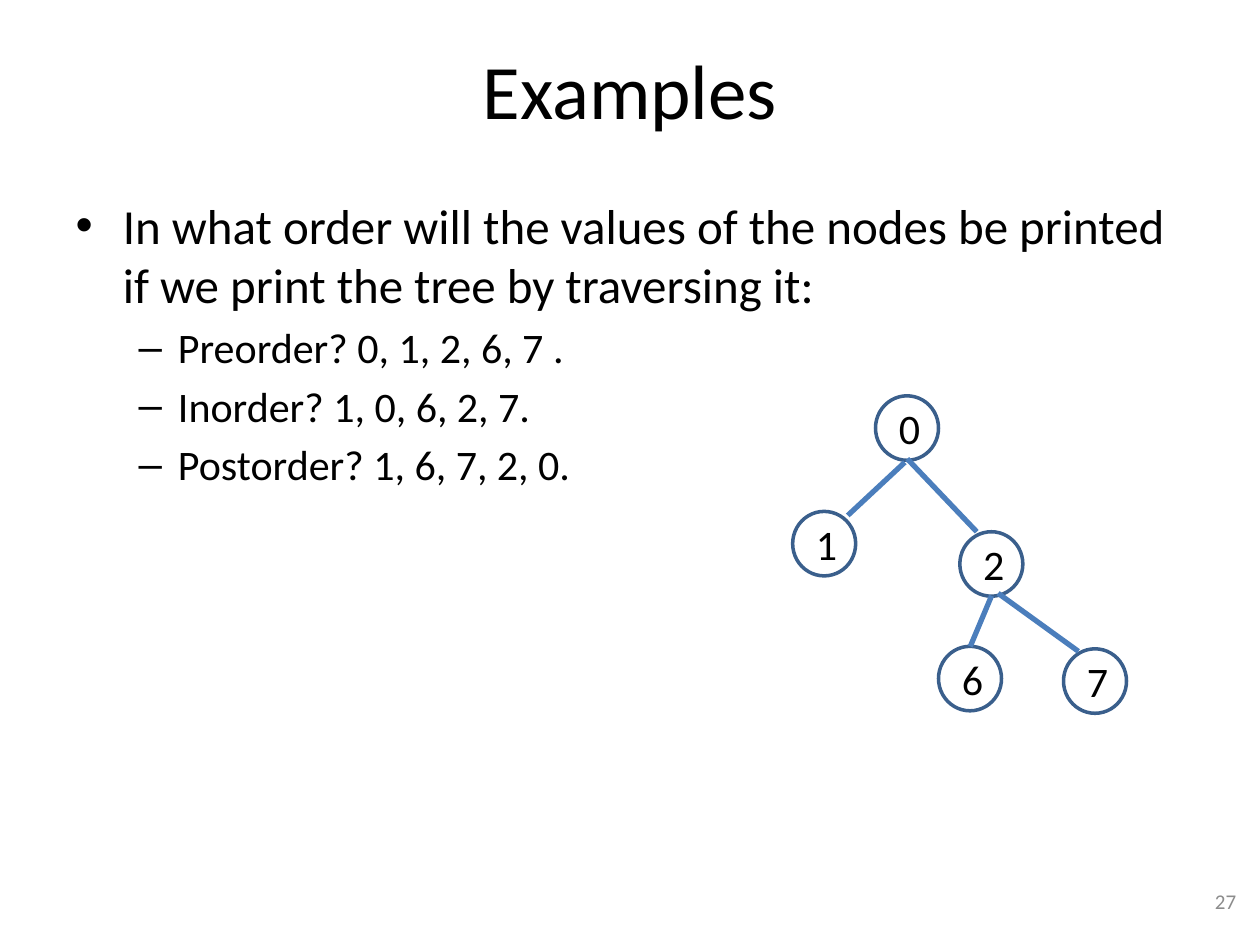
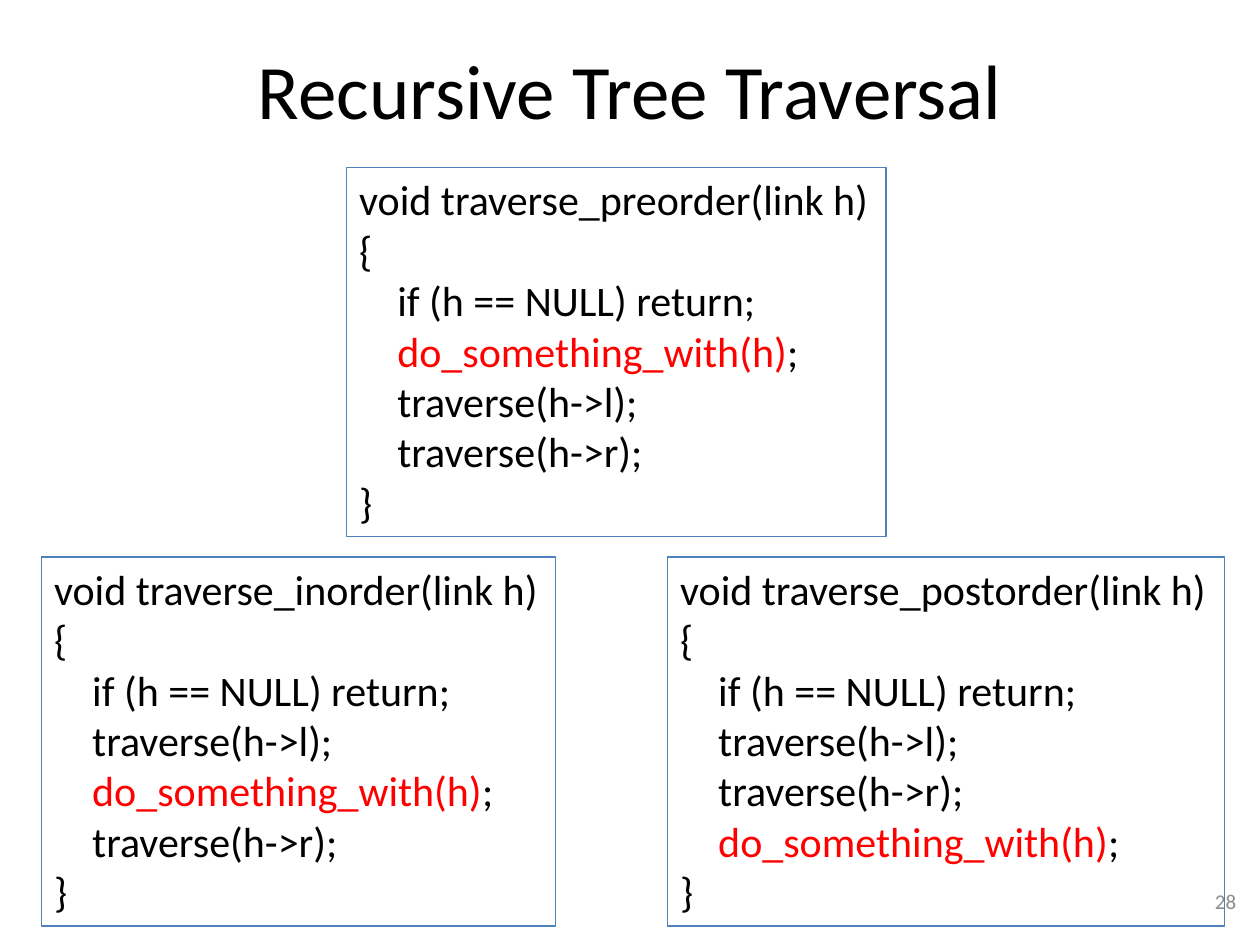
"""Build two slides on the order of tree traversal."""
from lxml.etree import SubElement as Sub
from pptx import Presentation as Deck
from pptx.dml.color import RGBColor as Rgb
from pptx.enum.shapes import MSO_CONNECTOR as Link, MSO_SHAPE as Form
from pptx.enum.text import MSO_ANCHOR as Anchor, MSO_AUTO_SIZE as Fit, PP_ALIGN as Align
from pptx.oxml.ns import qn
from pptx.util import Cm, Pt

INK = {"text": "000000", "page": "8C8C8C", "ring": "3A5F8C",
       "edge": "4B7EBC", "frame": "4F81BD", "visit": "FF0000"}
FONT = "Calibri"

ITEMS = [
    (0, "In what order will the values of the nodes be printed "
        "if we print the tree by traversing it:"),
    (1, "Preorder? 0, 1, 2, 6, 7 ."),
    (1, "Inorder? 1, 0, 6, 2, 7."),
    (1, "Postorder? 1, 6, 7, 2, 0."),
]
SIZES = [28, 24]
NODES = {"0": (17.65, 7.98), "1": (15.98, 10.31), "7": (21.44, 13.08),
         "2": (19.35, 10.72), "6": (18.92, 13.03)}
NODE = (1.27, 1.3)
EDGES = [
    (18.24, 9.32, 17.09, 10.39),
    (18.29, 9.25, 19.69, 10.72),
    (20.12, 11.96, 21.74, 13.13),
    (19.99, 12.01, 19.56, 13.03),
]

VISIT = "do_something_with(h)"
STEPS = ["traverse(h->l)", "traverse(h->r)"]
CODES = [
    ("inorder", 1, 0.84, 11.23, 10.36),
    ("preorder", 0, 6.99, 3.38, 10.87),
    ("postorder", 2, 13.46, 11.23, 11.23),
]
TALL = 7.44
TAB = 0.77


def tint(name):
    return Rgb.from_string(INK[name])


def place(part, *box):
    part.left, part.top, part.width, part.height = map(Cm, box)


def write(para, text, size, ink="text"):
    run = para.add_run()
    run.text = text
    run.font.name, run.font.size = FONT, Pt(size)
    run.font.color.rgb = tint(ink)


def lines(frame):
    yield frame.paragraphs[0]
    while True:
        yield frame.add_paragraph()


def start(deck, layout, title, page):
    slide = deck.slides.add_slide(deck.slide_layouts[layout])
    head = slide.shapes.title
    place(head, 1.27, 0.2, 22.86, 3.18)
    head.text_frame.vertical_anchor = Anchor.MIDDLE
    write(head.text_frame.paragraphs[0], title, 44)
    foot = slide.shapes.add_textbox(*map(Cm, (19.25, 17.65, 5.92, 1.02)))
    foot.text_frame.word_wrap = True
    foot.text_frame.vertical_anchor = Anchor.MIDDLE
    para = foot.text_frame.paragraphs[0]
    para.alignment = Align.RIGHT
    write(para, str(page), 12, "page")
    return slide


def add_list(slide):
    body = slide.placeholders[1]
    place(body, 1.27, 3.81, 22.86, 13.97)
    body.text_frame.auto_size = Fit.NONE
    for para, (level, text) in zip(lines(body.text_frame), ITEMS):
        para.level = level
        write(para, text, SIZES[level])


def add_node(slide, name, spot):
    ring = slide.shapes.add_shape(Form.OVAL, *map(Cm, spot + NODE))
    ring.shadow.inherit = False
    ring.fill.background()
    ring.line.color.rgb, ring.line.width = tint("ring"), Pt(2)
    frame = ring.text_frame
    frame.word_wrap = False
    frame.vertical_anchor = Anchor.MIDDLE
    frame.margin_left = Cm(0.1)
    frame.margin_right = frame.margin_top = frame.margin_bottom = 0
    frame.paragraphs[0].alignment = Align.CENTER
    write(frame.paragraphs[0], name, 24)


def add_edge(slide, ends):
    edge = slide.shapes.add_connector(Link.STRAIGHT, *map(Cm, ends))
    edge.line.color.rgb, edge.line.width = tint("edge"), Pt(3)
    Sub(edge.element.spPr, qn("a:effectLst"))


def add_code(slide, order, turn, left, top, width):
    box = slide.shapes.add_textbox(*map(Cm, (left, top, width, TALL)))
    box.line.color.rgb, box.line.width = tint("frame"), Pt(0.75)
    frame = box.text_frame
    frame.word_wrap = False
    calls = STEPS[:turn] + [VISIT] + STEPS[turn:]
    rows = [(0, [f"void traverse_{order}(link h)"]), (0, ["{"]),
            (1, ["if (h == NULL) return;"])]
    rows += [(1, [call, ";"]) for call in calls] + [(0, ["}"])]
    for para, (depth, parts) in zip(lines(frame), rows):
        if depth:
            para._p.get_or_add_pPr().set("marL", str(Cm(TAB)))
        for part in parts:
            write(para, part, 24, "visit" if part == VISIT else "text")


def main():
    deck = Deck()
    deck.slide_width, deck.slide_height = Cm(25.4), Cm(19.05)
    slide = start(deck, 1, "Examples", 27)
    add_list(slide)
    for name, spot in NODES.items():
        add_node(slide, name, spot)
    for ends in EDGES:
        add_edge(slide, ends)
    slide = start(deck, 5, "Recursive Tree Traversal", 28)
    for code in CODES:
        add_code(slide, *code)
    deck.save("out.pptx")


if __name__ == "__main__":
    main()
